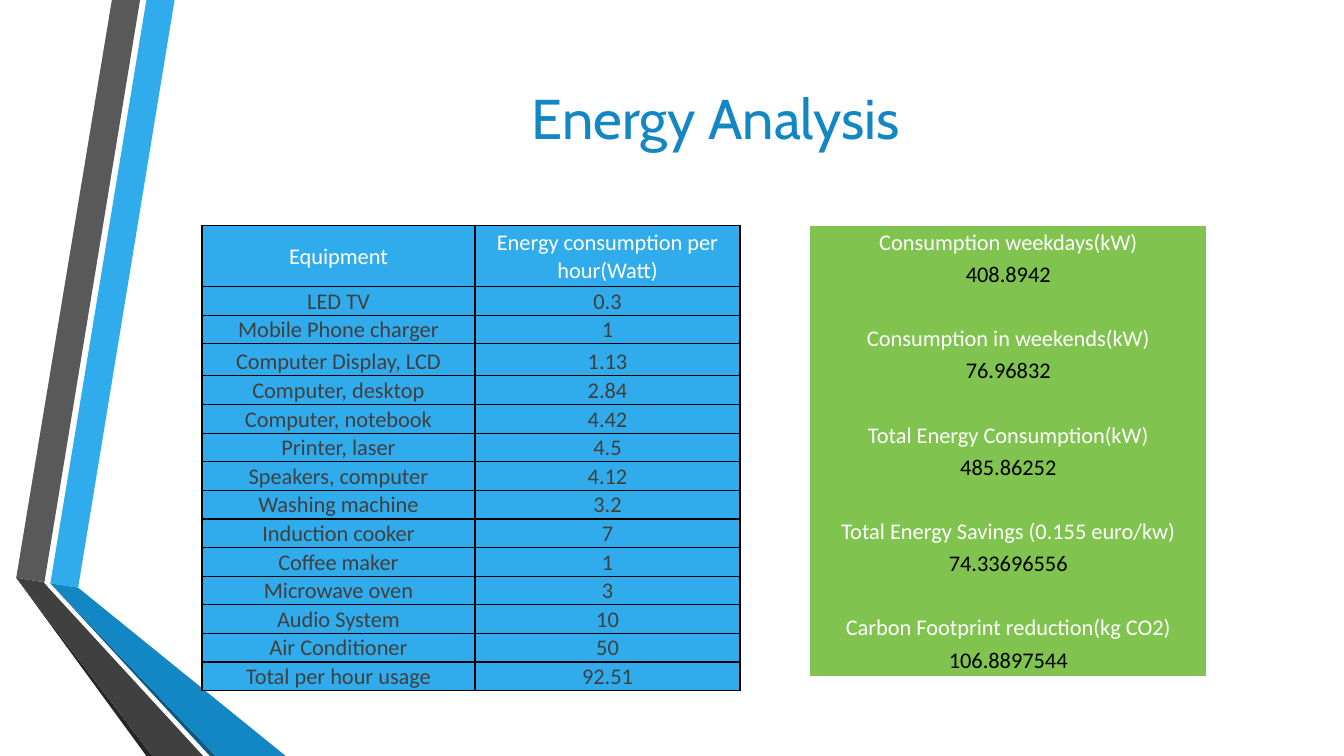
from dataclasses import dataclass

from lxml import etree
from pptx import Presentation
from pptx import util as u
from pptx.dml.color import RGBColor
from pptx.enum import text
from pptx.oxml import ns


@dataclass(frozen=True)
class Theme:
    blue: str = "30ACEC"
    deep_blue: str = "1287C3"
    navy: str = "0C5A82"
    green: str = "80C34F"
    grey: str = "595959"
    dark_grey: str = "404040"
    charcoal: str = "262626"
    white: str = "FFFFFF"
    black: str = "000000"
    title_font: str = "Cabin"
    body_font: str = "Calibri"
    title_size: int = 40
    body_size: int = 16


class SlideBuilder:
    def __init__(self, theme, slide):
        self.theme = theme
        self.slide = slide

    def format_text(self, paragraph, font, size, color):
        paragraph.alignment = text.PP_ALIGN.CENTER
        settings = {"name": font, "size": u.Pt(size), "bold": False}
        for key, value in settings.items():
            setattr(paragraph.font, key, value)
        paragraph.font.color.rgb = RGBColor.from_string(color)

    def title(self, wording, left, top, width, height):
        heading = self.slide.shapes.title
        box = {"left": left, "top": top, "width": width, "height": height}
        for key, value in box.items():
            setattr(heading, key, u.Cm(value))
        heading.text_frame.text = wording
        heading.text_frame.vertical_anchor = text.MSO_ANCHOR.MIDDLE
        self.format_text(heading.text_frame.paragraphs[0], self.theme.title_font,
                         self.theme.title_size, self.theme.deep_blue)

    def ribbon(self, color, points):
        start, *rest = [(u.Cm(x), u.Cm(y)) for x, y in points]
        outline = self.slide.shapes.build_freeform(*start)
        outline.add_line_segments(rest, close=True)
        band = outline.convert_to_shape()
        band.shadow.inherit = False
        band.fill.solid()
        band.fill.fore_color.rgb = RGBColor.from_string(color)
        band.line.fill.background()

    def borders(self, cell, color):
        properties = cell._tc.get_or_add_tcPr()
        for side in ("lnL", "lnR", "lnT", "lnB"):
            line = etree.SubElement(properties, ns.qn(f"a:{side}"), w=str(u.Pt(1)))
            if color:
                solid = etree.SubElement(line, ns.qn("a:solidFill"))
                etree.SubElement(solid, ns.qn("a:srgbClr"), val=color)
            else:
                etree.SubElement(line, ns.qn("a:noFill"))

    def cell(self, cell, wording, color, fill, border, anchor):
        self.borders(cell, border)
        cell.fill.solid()
        cell.fill.fore_color.rgb = RGBColor.from_string(fill)
        settings = {"margin_left": u.Cm(0.03), "margin_right": u.Cm(0.03),
                    "margin_top": u.Cm(0.03), "margin_bottom": 0,
                    "vertical_anchor": anchor, "text": wording}
        for key, value in settings.items():
            setattr(cell, key, value)
        self.format_text(cell.text_frame.paragraphs[0], self.theme.body_font,
                         self.theme.body_size, color)

    def table(self, left, top, widths, heights, rows, colors, anchors, fill, border=None):
        grid = self.slide.shapes.add_table(
            len(rows), len(widths), u.Cm(left), u.Cm(top),
            u.Cm(sum(widths)), u.Cm(sum(heights))).table
        grid.first_row = grid.horz_banding = False
        for column, width in zip(grid.columns, widths):
            column.width = u.Cm(width)
        for row, height, wordings, color, anchor in zip(
                grid.rows, heights, rows, colors, anchors):
            row.height = u.Cm(height)
            for cell, wording in zip(row.cells, wordings):
                self.cell(cell, wording, color, fill, border, anchor)


EQUIPMENT = [
    ("Equipment", "Energy consumption per hour(Watt)"),
    ("LED TV", "0.3"),
    ("Mobile Phone charger", "1"),
    ("Computer Display, LCD", "1.13"),
    ("Computer, desktop", "2.84"),
    ("Computer, notebook", "4.42"),
    ("Printer, laser", "4.5"),
    ("Speakers, computer", "4.12"),
    ("Washing machine", "3.2"),
    ("Induction cooker", "7"),
    ("Coffee maker", "1"),
    ("Microwave oven", "3"),
    ("Audio System", "10"),
    ("Air Conditioner", "50"),
    ("Total per hour usage", "92.51"),
]
TOTALS = [
    ("Consumption weekdays(kW)", "408.8942"),
    ("Consumption in weekends(kW)", "76.96832"),
    ("Total Energy Consumption(kW)", "485.86252"),
    ("Total Energy Savings (0.155 euro/kw)", "74.33696556"),
    ("Carbon Footprint reduction(kg CO2)", "106.8897544"),
]


def main():
    theme = Theme()
    deck = Presentation()
    deck.slide_width, deck.slide_height = u.Cm(33.87), u.Cm(19.05)
    page = SlideBuilder(theme, deck.slides.add_slide(deck.slide_layouts[5]))

    # Folded ribbons on the left edge
    bottom = 19.05
    grey_fold, blue_fold = (0.41, 14.56), (1.27, 14.7)
    ribbons = [
        (theme.blue, [blue_fold, (1.97, 14.81), (4.4, 0), (3.69, 0)]),
        (theme.grey, [(3.53, 0), (2.82, 0), grey_fold, (1.12, 14.67)]),
        (theme.charcoal, [grey_fold, (3.69, bottom), (3.84, bottom)]),
        (theme.navy, [blue_fold, (5.29, bottom), (5.44, bottom)]),
        (theme.deep_blue, [blue_fold, (5.44, bottom), (7.2, bottom), (1.97, 14.81)]),
        (theme.dark_grey, [(5.12, bottom), (1.22, 14.81), (1.1, 14.67),
                           grey_fold, (3.84, bottom)]),
    ]
    for color, points in ribbons:
        page.ribbon(color, points)

    # Title
    page.title("Energy Analysis", 4.12, 1.9, 27.84, 2.08)

    # Equipment consumption
    middle, low = text.MSO_ANCHOR.MIDDLE, text.MSO_ANCHOR.BOTTOM
    items = len(EQUIPMENT) - 1
    heights = [1.53] + [0.7] * items
    heights[3] = 0.81
    page.table(5.09, 5.69, [6.88, 6.68], heights, EQUIPMENT,
               [theme.white] + [theme.dark_grey] * items,
               [middle] + [low] * items, theme.blue, theme.black)

    # Totals: label, value and a spacer row between groups
    rows = [(line,) for label, value in TOTALS for line in (label, value, "")][:-1]
    page.table(20.42, 5.69, [9.98], [0.81] * len(rows), rows,
               [theme.white, theme.black, theme.black] * len(TOTALS),
               [middle] * len(rows), theme.green)

    deck.save("out.pptx")


if __name__ == "__main__":
    main()
